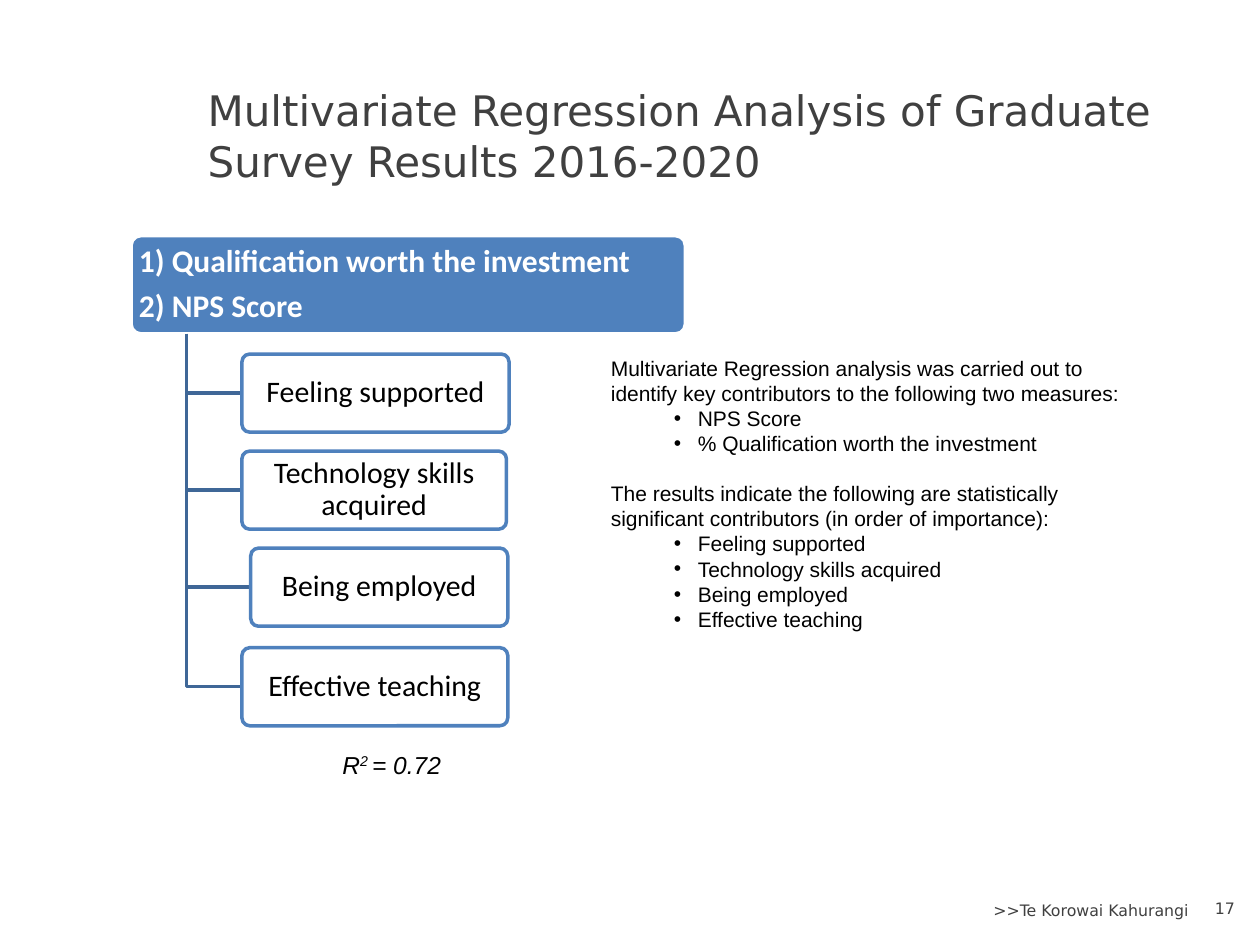
from typing import NamedTuple

from lxml import etree
from pptx import Presentation
from pptx import util as u
from pptx.dml.color import RGBColor
from pptx.enum import shapes, text
from pptx.oxml.ns import qn

EMU_PER_PX = 9144  # 100 px to the inch
BLUE, DARK_BLUE, WHITE, BLACK, GREY = "4F81BD", "3F6797", "FFFFFF", "000000", "404040"
TRUNK_X, TRUNK_TOP = 148, 265
BRANCH_HEIGHT = 62


class Box(NamedTuple):
    left: int
    top: int
    width: int
    height: int


class Style(NamedTuple):
    font: str
    size: int
    color: str
    bold: bool = False
    italic: bool = False
    align: text.PP_ALIGN = text.PP_ALIGN.LEFT


class Factor(NamedTuple):
    label: str
    left: int
    top: int
    width: int


class Finding(NamedTuple):
    intro: str
    items: list[str]


FACTORS = [
    Factor("Feeling supported", 192, 281, 212),
    Factor("Technology skills acquired", 192, 358, 210),
    Factor("Being employed", 199, 435, 204),
    Factor("Effective teaching", 192, 514, 211),
]
FINDINGS = [
    Finding("Multivariate Regression analysis was carried out to identify key "
            "contributors to the following two measures:",
            ["NPS Score", "% Qualification worth the investment"]),
    Finding("The results indicate the following are statistically significant "
            "contributors (in order of importance):",
            [factor.label for factor in FACTORS]),
]

TITLE = Style("DejaVu Sans", 24, GREY)
FOOTER = Style("DejaVu Sans", 9, GREY, align=text.PP_ALIGN.RIGHT)
HEADER = Style("Calibri", 18, WHITE, bold=True)
BRANCH = Style("Calibri", 17, BLACK, align=text.PP_ALIGN.CENTER)
BODY = Style("Arial", 12, BLACK)
STATISTIC = Style("Arial", 14, BLACK, italic=True)


def px(value: int) -> u.Emu:
    return u.Emu(value * EMU_PER_PX)


def rgb(value: str) -> RGBColor:
    return RGBColor.from_string(value)


def format_paragraph(paragraph, style: Style) -> None:
    paragraph.alignment = style.align
    for run in paragraph.runs:
        font = run.font
        font.name, font.size = style.font, u.Pt(style.size)
        font.bold, font.italic = style.bold, style.italic
        font.color.rgb = rgb(style.color)


def add_text(slide, box: Box, content: str, style: Style,
             anchor=text.MSO_ANCHOR.MIDDLE):
    frame = slide.shapes.add_textbox(*map(px, box)).text_frame
    frame.word_wrap = True
    frame.vertical_anchor = anchor
    frame.text = content
    for paragraph in frame.paragraphs:
        format_paragraph(paragraph, style)
    return frame


def add_rounded_box(slide, box: Box, content: str, style: Style,
                    fill: str, line: str, margin_y: int) -> None:
    shape = slide.shapes.add_shape(
        shapes.MSO_SHAPE.ROUNDED_RECTANGLE, *map(px, box))
    shape.adjustments[0] = 0.1
    shape.shadow.inherit = False
    shape.fill.solid()
    shape.fill.fore_color.rgb = rgb(fill)
    shape.line.color.rgb = rgb(line)
    shape.line.width = u.Pt(2)
    frame = shape.text_frame
    frame.word_wrap = True
    frame.vertical_anchor = text.MSO_ANCHOR.MIDDLE
    frame.margin_left = frame.margin_right = px(4)
    frame.margin_top = frame.margin_bottom = px(margin_y)
    frame.text = content
    for paragraph in frame.paragraphs:
        paragraph.line_spacing = 0.9
        paragraph.space_after = u.Pt(6)
        format_paragraph(paragraph, style)


def add_elbow(slide, end_x: int, end_y: int) -> None:
    """Draw the trunk down to a factor and the branch across to it."""
    builder = slide.shapes.build_freeform(TRUNK_X, TRUNK_TOP, scale=EMU_PER_PX)
    builder.add_line_segments([(TRUNK_X, end_y), (end_x, end_y)], close=False)
    shape = builder.convert_to_shape()
    shape.shadow.inherit = False
    shape.fill.background()
    shape.line.color.rgb = rgb(DARK_BLUE)
    shape.line.width = u.Pt(2)


def add_bullet(paragraph) -> None:
    properties = paragraph._p.get_or_add_pPr()
    properties.set("marL", str(px(69)))
    properties.set("indent", str(px(-19)))
    font = etree.SubElement(properties, qn("a:buFont"))
    font.set("typeface", "Arial")
    etree.SubElement(properties, qn("a:buChar")).set("char", "•")


def add_findings(slide, box: Box) -> None:
    frame = add_text(slide, box, "", BODY, text.MSO_ANCHOR.TOP)
    for index, finding in enumerate(FINDINGS):
        paragraph = frame.add_paragraph() if index else frame.paragraphs[0]
        paragraph.text = finding.intro
        if index:
            paragraph.space_before = u.Pt(14)
        format_paragraph(paragraph, BODY)
        for item in finding.items:
            paragraph = frame.add_paragraph()
            paragraph.text = item
            add_bullet(paragraph)
            format_paragraph(paragraph, BODY)


def add_r_squared(slide, box: Box) -> None:
    frame = add_text(slide, box, "R", STATISTIC, text.MSO_ANCHOR.TOP)
    paragraph = frame.paragraphs[0]
    exponent = paragraph.add_run()
    exponent.text = "2 "
    exponent._r.get_or_add_rPr().set("baseline", "30000")
    paragraph.add_run().text = "= 0.72"
    format_paragraph(paragraph, STATISTIC)


def main() -> None:
    presentation = Presentation()
    presentation.slide_width, presentation.slide_height = px(1000), px(750)
    slide = presentation.slides.add_slide(presentation.slide_layouts[6])

    add_text(slide, Box(155, 51, 787, 113),
             "Multivariate Regression Analysis of Graduate Survey Results 2016-2020",
             TITLE)
    add_text(slide, Box(538, 710, 415, 25), ">>Te Korowai Kahurangi", FOOTER)
    add_text(slide, Box(944, 708, 46, 25), "17", FOOTER)

    add_rounded_box(slide, Box(104, 187, 440, 78),
                    "1) Qualification worth the investment\n2) NPS Score",
                    HEADER, BLUE, WHITE, margin_y=8)
    for factor in FACTORS:
        add_elbow(slide, factor.left, factor.top + BRANCH_HEIGHT // 2)
        add_rounded_box(
            slide, Box(factor.left, factor.top, factor.width, BRANCH_HEIGHT),
            factor.label, BRANCH, WHITE, BLUE, margin_y=2)

    add_findings(slide, Box(475, 277, 424, 303))
    add_r_squared(slide, Box(262, 590, 114, 34))
    presentation.save("out.pptx")


if __name__ == "__main__":
    main()
